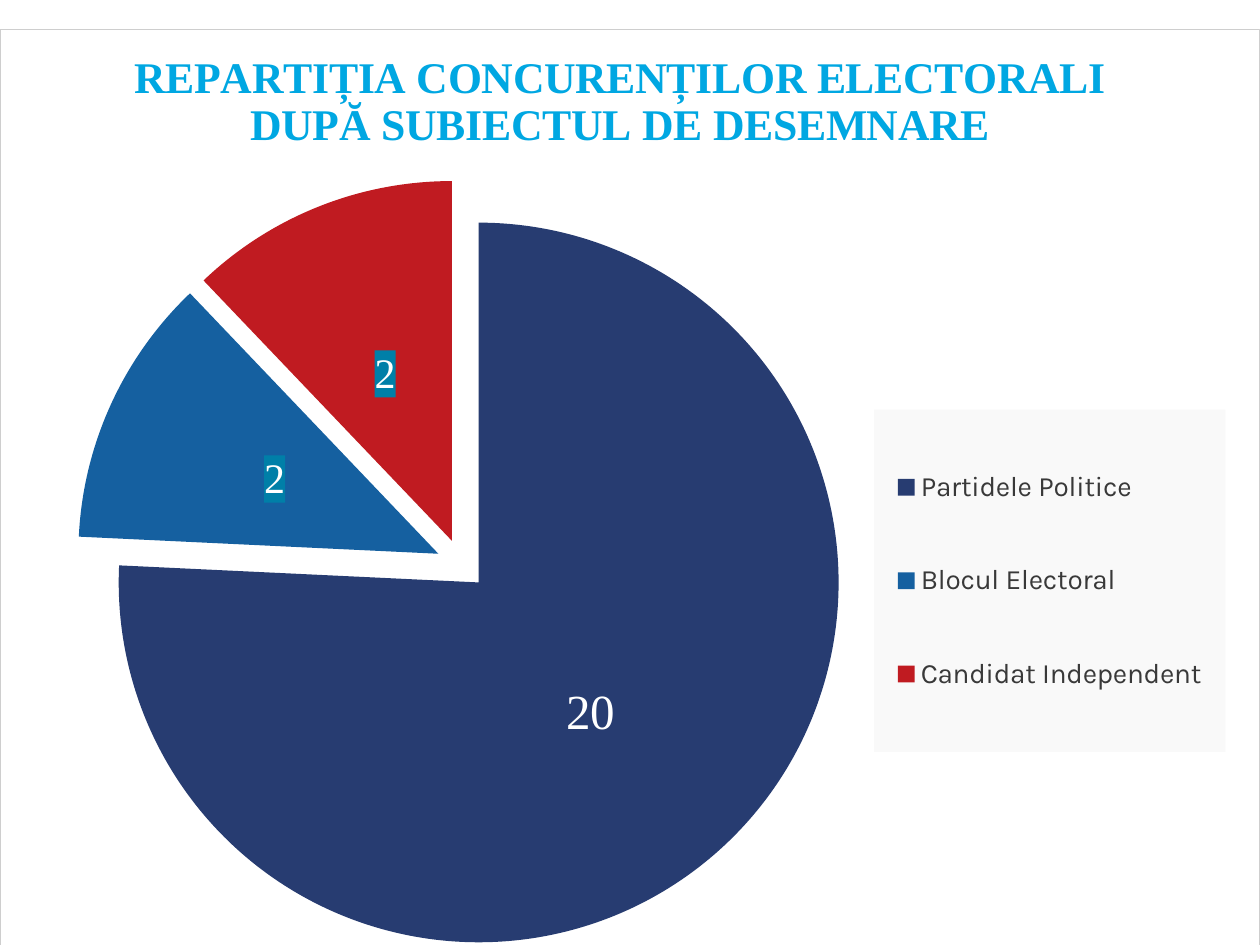
from typing import NamedTuple

from lxml.etree import _Element as Node
from pptx import Presentation
from pptx.chart.data import CategoryChartData as Data
from pptx.chart.point import Point
from pptx.dml.color import RGBColor
from pptx.enum.chart import XL_CHART_TYPE as Kind
from pptx.enum.chart import XL_LABEL_POSITION as Spot
from pptx.enum.chart import XL_LEGEND_POSITION as Side
from pptx.oxml import parse_xml as to_xml
from pptx.oxml.ns import nsdecls, qn
from pptx.text.text import Font
from pptx.util import Inches, Pt

NAVY = RGBColor(0x27, 0x3C, 0x71)
BLUE = RGBColor(0x15, 0x60, 0xA0)
RED = RGBColor(0xC0, 0x1B, 0x21)
CYAN = RGBColor(0x00, 0xA7, 0xE2)
TEAL = RGBColor(0x00, 0x7F, 0xA8)
GREY = RGBColor(0x39, 0x39, 0x39)
PALE = RGBColor(0xF9, 0xF9, 0xF9)
EDGE = RGBColor(0xCE, 0xCE, 0xCE)
WHITE = RGBColor(0xFF, 0xFF, 0xFF)
SANS, SERIF = "Karla", "Times New Roman"
WIDE, HIGH = Inches(10), Inches(7.5)


class Slice(NamedTuple):
    name: str
    share: int
    label: str
    size: int
    color: RGBColor


class Box(NamedTuple):
    x: float
    y: float
    w: float = 0
    h: float = 0


SLICES = [
    Slice("Partidele Politice", 75, "20", 28, NAVY),
    Slice("Blocul Electoral", 12, "2", 24, BLUE),
    Slice("Candidat Independent", 12, "2", 24, RED),
]
HEAD = Box(1, 0.1)
PIE = Box(0.6, 1.19, 6.12, 6.12)
KEY = Box(6.94, 3.02, 2.79, 2.72)


def style(font: Font, name: str, size: float, color: RGBColor, bold: bool = False) -> None:
    font.name, font.size, font.bold = name, Pt(size), bold
    font.color.rgb = color


def layout(box: Box, inner: bool = False) -> Node:
    target = '<c:layoutTarget val="inner"/>' if inner else ""
    modes = '<c:xMode val="edge"/><c:yMode val="edge"/>'
    spans = zip("xywh", box, (WIDE, HIGH, WIDE, HIGH))
    sides = "".join(
        f'<c:{k} val="{Inches(v) / full}"/>' for k, v, full in spans if v
    )
    return to_xml(
        f'<c:layout {nsdecls("c")}><c:manualLayout>{target}{modes}{sides}'
        "</c:manualLayout></c:layout>"
    )


def clear(node: Node) -> None:
    for old in node.findall(qn("c:layout")):
        node.remove(old)


def paint(fill: RGBColor, line: RGBColor | None = None) -> Node:
    edge = ""
    if line is not None:
        edge = (f'<a:ln w="{Pt(0.75)}"><a:solidFill><a:srgbClr val="{line}"/>'
                "</a:solidFill></a:ln>")
    return to_xml(
        f'<c:spPr {nsdecls("c", "a")}><a:solidFill><a:srgbClr val="{fill}"/>'
        f"</a:solidFill>{edge}</c:spPr>"
    )


def dress(point: Point, item: Slice) -> None:
    point.format.fill.solid()
    point.format.fill.fore_color.rgb = item.color
    tag = point.data_label
    tag.position = Spot.CENTER
    para = tag.text_frame.paragraphs[0]
    run = para.add_run()
    run.text = item.label
    style(run.font, SERIF, item.size, WHITE)
    rich = para._p.getparent()
    rich.getparent().addnext(paint(TEAL))


def nudge(point: Point, x: float) -> None:
    text = point.data_label.text_frame.paragraphs[0]._p.getparent().getparent()
    clear(text.getparent())
    text.addprevious(to_xml(
        f'<c:layout {nsdecls("c")}><c:manualLayout><c:x val="{x}"/>'
        '<c:y val="0"/></c:manualLayout></c:layout>'
    ))


def main() -> None:
    deck = Presentation()
    deck.slide_width, deck.slide_height = WIDE, HIGH
    slide = deck.slides.add_slide(deck.slide_layouts[6])

    data = Data()
    data.categories = [item.name for item in SLICES]
    data.add_series("Series 1", [item.share for item in SLICES])
    chart = slide.shapes.add_chart(
        Kind.PIE, Inches(0), Inches(0.23), WIDE, HIGH, data
    ).chart
    style(chart.font, SANS, 10, GREY)
    root = chart._chartSpace.find(qn("c:chart"))
    root.addnext(paint(WHITE, EDGE))

    chart.has_title = True
    title = chart.chart_title.text_frame
    title.text = "REPARTIȚIA CONCURENȚILOR ELECTORALI DUPĂ SUBIECTUL DE DESEMNARE"
    style(title.paragraphs[0].runs[0].font, SERIF, 25, CYAN, True)
    head = root.find(qn("c:title"))
    clear(head)
    head.find(qn("c:tx")).addnext(layout(HEAD))

    chart.has_legend = True
    legend = chart.legend
    legend.position = Side.RIGHT
    legend.include_in_layout = False
    style(legend.font, SANS, 16, GREY)
    clear(legend._element)
    over = legend._element.find(qn("c:overlay"))
    over.addprevious(layout(KEY))
    over.addnext(paint(PALE))

    area = root.find(qn("c:plotArea"))
    clear(area)
    area.insert(0, layout(PIE, True))

    plot = chart.plots[0]
    plot.vary_by_categories = True
    series = plot.series[0]
    for i, item in enumerate(SLICES):
        dress(series.points[i], item)
    nudge(series.points[0], -0.01)
    burst = to_xml(f'<c:explosion {nsdecls("c")} val="7"/>')
    series._element.find(qn("c:dPt")).addprevious(burst)

    deck.save("out.pptx")


if __name__ == "__main__":
    main()
